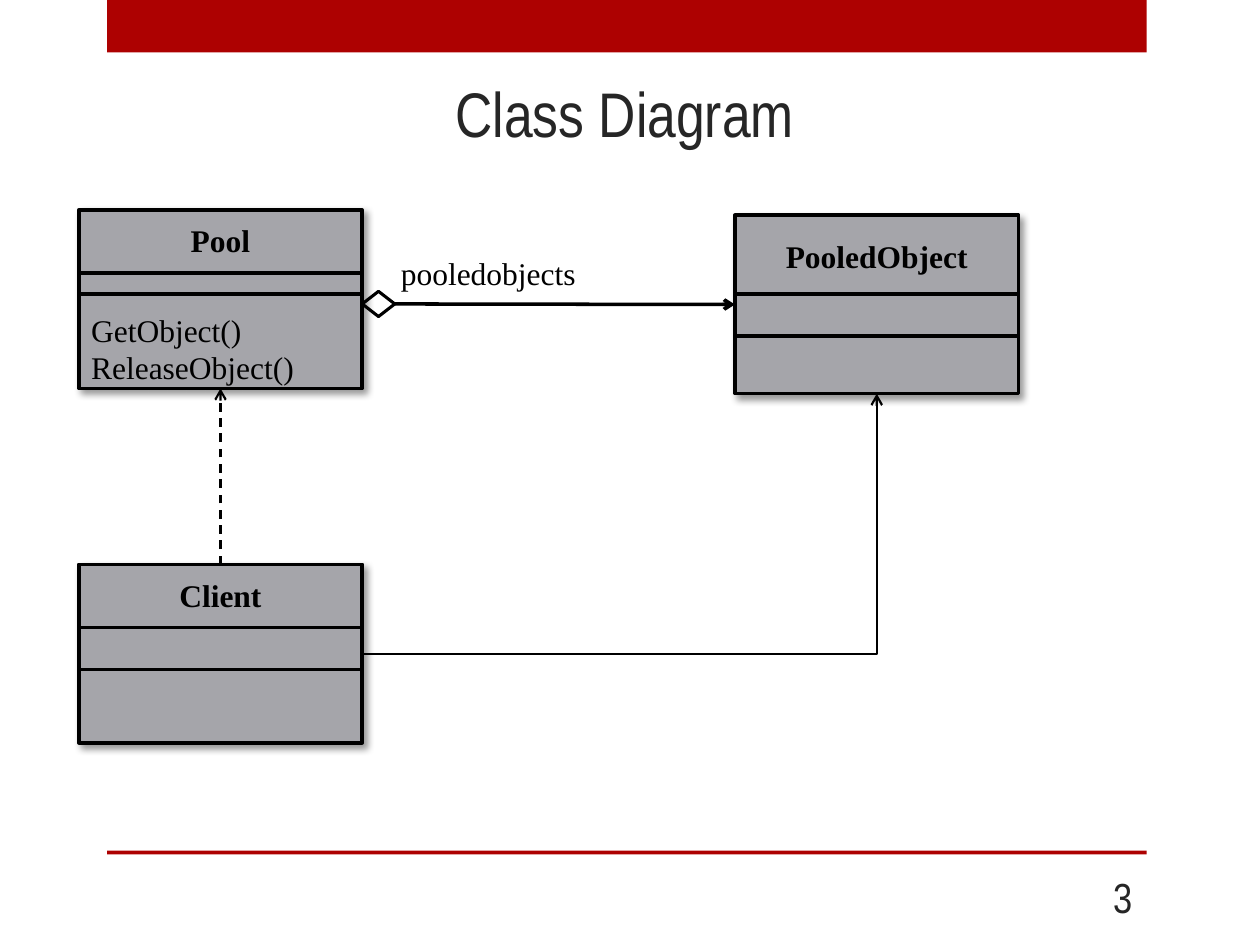
from dataclasses import dataclass

import pptx
import pptx.dml.color
import pptx.enum.dml
import pptx.enum.shapes
import pptx.enum.text
import pptx.oxml
import pptx.oxml.ns
import pptx.util

Shape = pptx.enum.shapes.MSO_SHAPE
Connector = pptx.enum.shapes.MSO_CONNECTOR
Align = pptx.enum.text.PP_ALIGN
Anchor = pptx.enum.text.MSO_ANCHOR
TOP, LEFT, BOTTOM, RIGHT = range(4)
UNITS_PER_INCH = 24  # the page is a grid of 240 columns by 180 rows
CLASS_WIDTH, CLASS_HEIGHT = 54, 34
LINE_ROWS = 9.6


@dataclass(frozen=True)
class Theme:
    accent: str = "AD0101"
    heading: str = "262626"
    ink: str = "000000"
    class_fill: str = "A5A5AA"
    heading_font: str = "Arial Narrow"
    body_font: str = "Times New Roman"
    title_size: float = 36
    number_size: float = 24
    body_size: float = 18
    border: float = 2
    thin: float = 1.25


@dataclass(frozen=True)
class ClassBox:
    name: str
    column: float
    row: float
    dividers: tuple[float, float]
    name_row: float
    name_width: float
    methods: tuple[str, ...] = ()


THEME = Theme()
CLASSES = (
    ClassBox("PooledObject", 140, 41, (15, 23), 3, 40),
    ClassBox("Pool", 15, 40, (12, 16), 1, 16.4, ("GetObject()", "ReleaseObject()")),
    ClassBox("Client", 15, 107.5, (12, 20), 1, 20.6),
)


def grid(*units: float) -> list[int]:
    return [pptx.util.Inches(unit / UNITS_PER_INCH) for unit in units]


def color(value: str):
    return pptx.dml.color.RGBColor.from_string(value)


def write(frame, *lines: str, font=THEME.body_font, size=THEME.body_size,
          ink=THEME.ink, bold=False, align=Align.LEFT, anchor=Anchor.TOP,
          wrap=False) -> None:
    frame.word_wrap = wrap
    frame.vertical_anchor = anchor
    for index, line in enumerate(lines):
        para = frame.add_paragraph() if index else frame.paragraphs[0]
        para.alignment = align
        span = para.add_run()
        span.text = line
        span.font.name = font
        span.font.size = pptx.util.Pt(size)
        span.font.bold = bold
        span.font.color.rgb = color(ink)


def add_text(page, place: tuple[float, ...], *lines: str, **formatting) -> None:
    write(page.shapes.add_textbox(*grid(*place)).text_frame, *lines, **formatting)


def add_bar(page, row: float, height: float) -> None:
    bar = page.shapes.add_shape(Shape.RECTANGLE, *grid(20.4, row, 198, height))
    bar.shadow.inherit = False
    bar.fill.solid()
    bar.fill.fore_color.rgb = color(THEME.accent)
    bar.line.fill.background()


def add_line(page, start=(0, 0), end=(0, 0), kind=Connector.STRAIGHT,
             weight=THEME.border, arrow=False, dashed=False):
    line = page.shapes.add_connector(kind, *grid(*start, *end))
    line.line.color.rgb = color(THEME.ink)
    line.line.width = pptx.util.Pt(weight)
    if dashed:
        line.line.dash_style = pptx.enum.dml.MSO_LINE.DASH
    if arrow:
        outline = line.line._get_or_add_ln()
        outline.append(pptx.oxml.parse_xml(
            f'<a:tailEnd {pptx.oxml.ns.nsdecls("a")} type="arrow"/>'))
    line._element.spPr.append(pptx.oxml.parse_xml(
        f'<a:effectLst {pptx.oxml.ns.nsdecls("a")}/>'))
    return line


def join(page, source, source_side: int, target, target_side: int, **formatting):
    line = add_line(page, arrow=True, **formatting)
    line.begin_connect(source, source_side)
    line.end_connect(target, target_side)
    return line


def add_shadow(shape) -> None:
    shape.shadow.inherit = False
    effects = shape._element.spPr.find(pptx.oxml.ns.qn("a:effectLst"))
    effects.append(pptx.oxml.parse_xml(
        f'<a:outerShdw {pptx.oxml.ns.nsdecls("a")} blurRad="{pptx.util.Pt(4)}" '
        f'dist="{pptx.util.Pt(3)}" dir="{45 * 60000}" algn="tl" rotWithShape="0">'
        f'<a:srgbClr val="{THEME.ink}"><a:alpha val="40000"/></a:srgbClr></a:outerShdw>'))


def add_class(page, item: ClassBox):
    box = page.shapes.add_shape(
        Shape.RECTANGLE, *grid(item.column, item.row, CLASS_WIDTH, CLASS_HEIGHT))
    box.fill.solid()
    box.fill.fore_color.rgb = color(THEME.class_fill)
    box.line.color.rgb = color(THEME.ink)
    box.line.width = pptx.util.Pt(THEME.border)
    add_shadow(box)
    for offset in item.dividers:
        row = item.row + offset
        add_line(page, (item.column, row), (item.column + CLASS_WIDTH, row))
    name_column = item.column + (CLASS_WIDTH - item.name_width) / 2
    add_text(page, (name_column, item.row + item.name_row, item.name_width, LINE_ROWS),
             item.name, bold=True, align=Align.CENTER)
    if item.methods:
        add_text(page, (item.column, item.row + 18, 44, 17), *item.methods)
    return box


def add_diamond(page):
    diamond = page.shapes.add_shape(Shape.DIAMOND, *grid(69, 55.5, 6.2, 4.8))
    diamond.shadow.inherit = False
    diamond.fill.background()
    diamond.line.color.rgb = color(THEME.ink)
    diamond.line.width = pptx.util.Pt(1.75)
    return diamond


def main() -> None:
    deck = pptx.Presentation()
    deck.slide_width, deck.slide_height = grid(240, 180)
    page = deck.slides.add_slide(deck.slide_layouts.get_by_name("Title Only"))

    title = page.shapes.title
    title.left, title.top, title.width, title.height = grid(20, 12.7, 198, 17.3)
    heading = {"font": THEME.heading_font, "ink": THEME.heading,
               "anchor": Anchor.MIDDLE, "wrap": True}
    write(title.text_frame, "Class Diagram", size=THEME.title_size,
          align=Align.CENTER, **heading)
    add_bar(page, 0, 10)
    add_bar(page, 162, 0.75)
    add_text(page, (198, 166, 20, LINE_ROWS), "3", size=THEME.number_size,
             align=Align.RIGHT, **heading)

    boxes = {item.name: add_class(page, item) for item in CLASSES}
    pool, pooled, client = boxes["Pool"], boxes["PooledObject"], boxes["Client"]
    join(page, add_diamond(page), RIGHT, pooled, LEFT)
    add_text(page, (74, 47.3, 38.4, LINE_ROWS), "pooledobjects")
    join(page, client, TOP, pool, BOTTOM, weight=THEME.thin, dashed=True)
    elbow = join(page, client, RIGHT, pooled, BOTTOM, weight=THEME.thin,
                 kind=Connector.ELBOW)
    elbow._element.spPr.find(pptx.oxml.ns.qn("a:prstGeom")).set("prst", "bentConnector2")

    deck.save("out.pptx")


if __name__ == "__main__":
    main()
